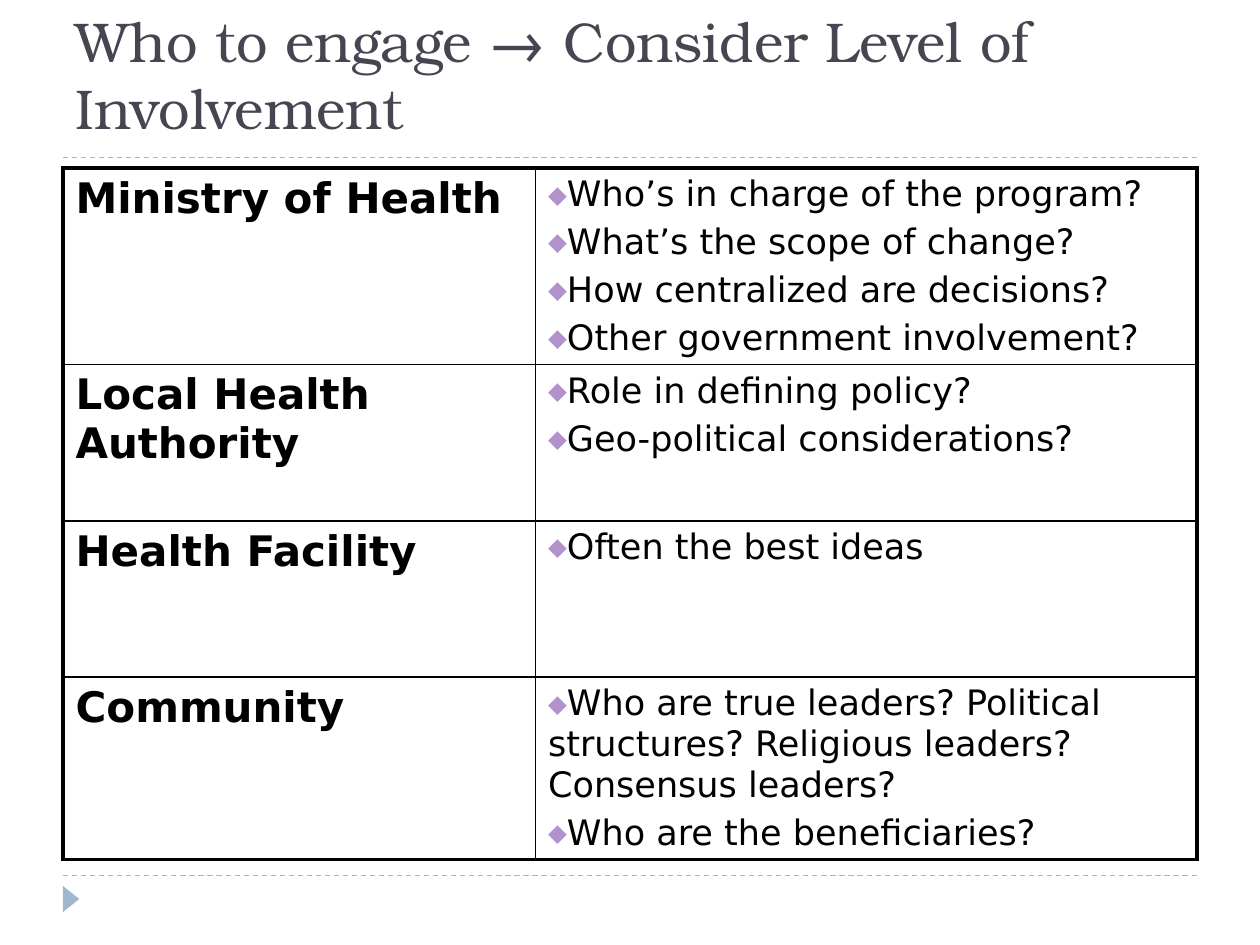
from dataclasses import dataclass

from lxml import etree
from pptx import Presentation
from pptx.dml.color import RGBColor
from pptx.enum.dml import MSO_LINE
from pptx.enum.shapes import MSO_CONNECTOR, MSO_SHAPE
from pptx.enum.text import MSO_ANCHOR, MSO_AUTO_SIZE, PP_ALIGN
from pptx.oxml.ns import qn
from pptx.util import Pt

STRAIGHT = MSO_CONNECTOR.STRAIGHT
TRIANGLE = MSO_SHAPE.ISOSCELES_TRIANGLE
DASH = MSO_LINE.DASH
LEFT = PP_ALIGN.LEFT
TOP, BOTTOM = MSO_ANCHOR.TOP, MSO_ANCHOR.BOTTOM
NO_AUTOFIT = MSO_AUTO_SIZE.NONE
TITLE_ONLY = 5


@dataclass
class Theme:
    title_font: str = "TeX Gyre Bonum"
    body_font: str = "DejaVu Sans"
    title_color: str = "464653"
    text_color: str = "000000"
    accent: str = "9FB8CD"
    bullet_color: str = "B292CA"
    title_size: float = 32
    level_size: float = 24
    question_size: float = 20
    paragraph_gap: float = 4
    rule_width: float = 0.75
    inner_border: float = 1
    outer_border: float = 2.25


def write(paragraph, text, *, font, size, color, bold=False, gap=0):
    """Put formatted text in a paragraph."""
    paragraph.alignment = LEFT
    paragraph.space_before = Pt(gap)
    run = paragraph.add_run()
    run.text = text
    run.font.name = font
    run.font.size = Pt(size)
    run.font.bold = bold
    run.font.color.rgb = RGBColor.from_string(color)


class SlideBuilder:
    def __init__(self, slide, theme):
        self.slide = slide
        self.theme = theme

    def title(self, text, left, top, width, height):
        title = self.slide.shapes.title
        title.left, title.top = Pt(left), Pt(top)
        title.width, title.height = Pt(width), Pt(height)
        frame = title.text_frame
        frame.auto_size = NO_AUTOFIT
        frame.word_wrap = True
        frame.vertical_anchor = BOTTOM
        write(frame.paragraphs[0], text, font=self.theme.title_font,
              size=self.theme.title_size, color=self.theme.title_color)

    def dashed_rule(self, left, right, y):
        rule = self.slide.shapes.add_connector(
            STRAIGHT, Pt(left), Pt(y), Pt(right), Pt(y))
        rule.line.color.rgb = RGBColor.from_string(self.theme.accent)
        rule.line.width = Pt(self.theme.rule_width)
        rule.line.dash_style = DASH
        etree.SubElement(rule._element.spPr, qn("a:effectLst"))

    def page_marker(self, left, top, width, height):
        marker = self.slide.shapes.add_shape(
            TRIANGLE, Pt(left), Pt(top), Pt(width), Pt(height))
        marker.rotation = 90
        marker.shadow.inherit = False
        marker.fill.solid()
        marker.fill.fore_color.rgb = RGBColor.from_string(self.theme.accent)
        marker.line.fill.background()

    def bullet(self, paragraph):
        props = paragraph._p.get_or_add_pPr()
        props.set("marL", "0")
        props.set("indent", "0")
        color = etree.SubElement(props, qn("a:buClr"))
        etree.SubElement(color, qn("a:srgbClr"), val=self.theme.bullet_color)
        etree.SubElement(props, qn("a:buSzPct"), val="70000")
        etree.SubElement(props, qn("a:buFont"), typeface=self.theme.body_font)
        etree.SubElement(props, qn("a:buChar"), char="◆")

    def borders(self, cell, outer_sides):
        """Draw all four sides, heavier along the table's edge."""
        props = cell._tc.get_or_add_tcPr()
        for side in "LRTB":
            width = (self.theme.outer_border if side in outer_sides
                     else self.theme.inner_border)
            line = etree.SubElement(props, qn(f"a:ln{side}"), w=str(Pt(width)))
            fill = etree.SubElement(line, qn("a:solidFill"))
            etree.SubElement(fill, qn("a:srgbClr"), val=self.theme.text_color)

    def cell(self, cell, lines, size, bold=False, bulleted=False):
        cell.vertical_anchor = TOP
        frame = cell.text_frame
        for i, line in enumerate(lines):
            paragraph = frame.add_paragraph() if i else frame.paragraphs[0]
            write(paragraph, line, font=self.theme.body_font, size=size,
                  color=self.theme.text_color, bold=bold,
                  gap=self.theme.paragraph_gap if i else 0)
            if bulleted:
                self.bullet(paragraph)

    def level_table(self, levels, left, top, widths, row_height):
        last = len(levels) - 1
        table = self.slide.shapes.add_table(
            len(levels), len(widths), Pt(left), Pt(top),
            Pt(sum(widths)), Pt(row_height * len(levels))).table
        table.first_row = table.horz_banding = False
        for column, width in zip(table.columns, widths):
            column.width = Pt(width)
        for i, (level, questions) in enumerate(levels):
            table.rows[i].height = Pt(row_height)
            level_cell, question_cell = table.rows[i].cells
            self.cell(level_cell, [level], self.theme.level_size, bold=True)
            self.cell(question_cell, questions, self.theme.question_size,
                      bulleted=True)
            edges = ("T" if i == 0 else "") + ("B" if i == last else "")
            for cell, side in ((level_cell, "L"), (question_cell, "R")):
                self.borders(cell, side + edges)
                cell.fill.background()


LEVELS = [
    ("Ministry of Health", ["Who’s in charge of the program?",
                            "What’s the scope of change?",
                            "How centralized are decisions?",
                            "Other government involvement?"]),
    ("Local Health Authority", ["Role in defining policy?",
                                "Geo-political considerations?"]),
    ("Health Facility", ["Often the best ideas"]),
    ("Community", ["Who are true leaders? Political structures? "
                   "Religious leaders? Consensus leaders?",
                   "Who are the beneficiaries?"]),
]


def main():
    deck = Presentation()
    deck.slide_width, deck.slide_height = Pt(720), Pt(540)
    slide = deck.slides.add_slide(deck.slide_layouts[TITLE_ONLY])
    builder = SlideBuilder(slide, Theme())
    margin, content_width = 36, 648

    # Frame: rules above and below the content, marker in the footer
    for y in (500.4, 90):
        builder.dashed_rule(margin, margin + content_width, y)
    builder.page_marker(33.1, 509, 15, 9.4)

    # Title
    builder.title("Who to engage → Consider Level of Involvement",
                  margin, 0, content_width, 84)

    # Levels and the questions to ask at each
    builder.level_table(LEVELS, margin, 96, (270, 378), 89.3)

    deck.save("out.pptx")


if __name__ == "__main__":
    main()
